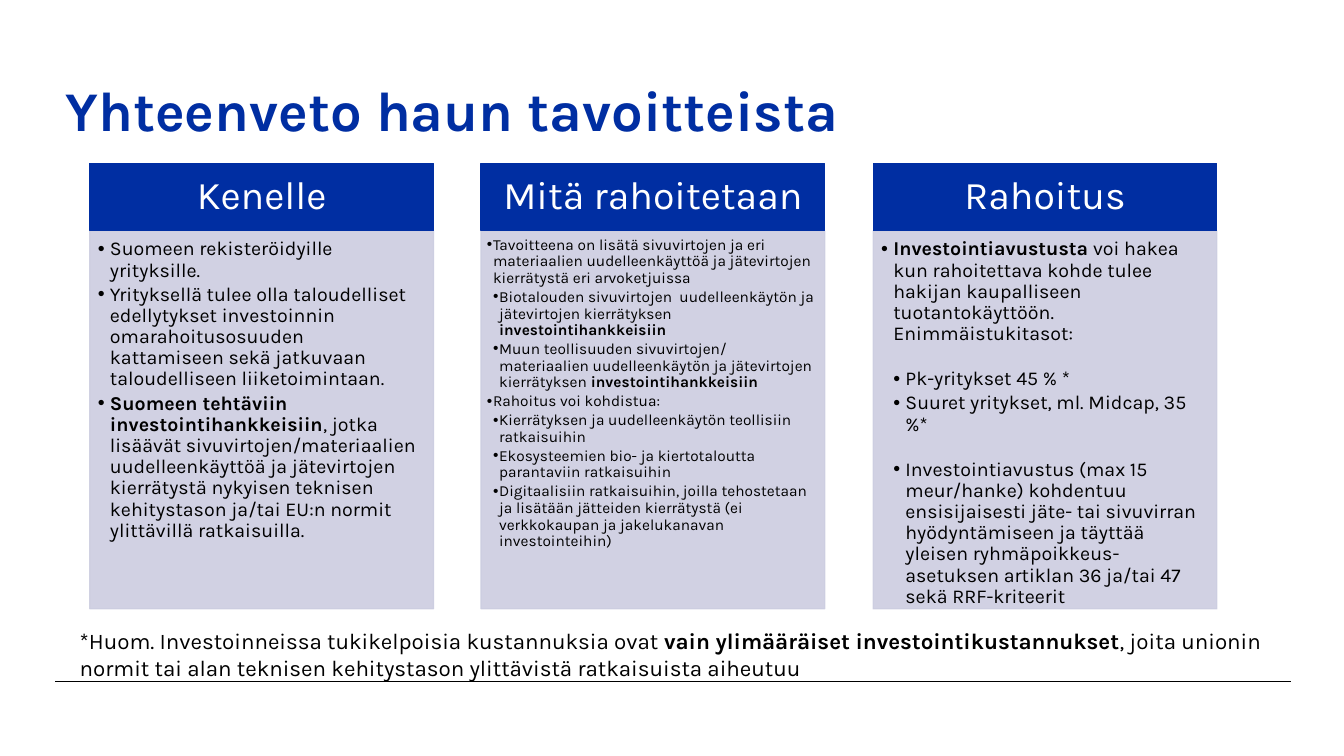
from lxml import etree
from pptx import Presentation
from pptx import util as u
from pptx.dml.color import RGBColor
from pptx.enum import shapes, text
from pptx.oxml.ns import qn

PX = 9144  # EMU in one px, 100 px to the inch
BLUE = RGBColor(0x00, 0x2E, 0xA2)
LAVENDER = RGBColor(0xCC, 0xCD, 0xE0)
BLACK = RGBColor(0x00, 0x00, 0x00)
WHITE = RGBColor(0xFF, 0xFF, 0xFF)

# Each column: heading, text size, indent step, insets, placeholder,
# and its list items as (level, text, extra space after in points)
COLUMNS = [
    ("Kenelle", 14, 12, (8, 8, 11, 12), 2, [
        (0, "Suomeen rekisteröidyille yrityksille.", 0),
        (0, "Yrityksellä tulee olla taloudelliset edellytykset investoinnin "
            "omarahoitusosuuden kattamiseen sekä jatkuvaan taloudelliseen "
            "liiketoimintaan.", 0),
        (0, "**Suomeen tehtäviin investointihankkeisiin**, jotka lisäävät "
            "sivuvirtojen/materiaalien uudelleenkäyttöä ja jätevirtojen "
            "kierrätystä nykyisen teknisen kehitystason ja/tai EU:n normit "
            "ylittävillä ratkaisuilla.", 0),
    ]),
    ("Mitä rahoitetaan", 11, 6, (6, 6, 9, 10), 3, [
        (0, "Tavoitteena on lisätä sivuvirtojen ja eri materiaalien "
            "uudelleenkäyttöä ja jätevirtojen kierrätystä eri arvoketjuissa", 0),
        (1, "Biotalouden sivuvirtojen  uudelleenkäytön ja jätevirtojen "
            "kierrätyksen **investointihankkeisiin**", 0),
        (1, "Muun teollisuuden sivuvirtojen/ materiaalien uudelleenkäytön ja "
            "jätevirtojen kierrätyksen **investointihankkeisiin**", 0),
        (0, "Rahoitus voi kohdistua:", 0),
        (1, "Kierrätyksen ja uudelleenkäytön teollisiin ratkaisuihin", 0),
        (1, "Ekosysteemien bio- ja kiertotaloutta parantaviin ratkaisuihin", 0),
        (1, "Digitaalisiin ratkaisuihin, joilla tehostetaan ja lisätään "
            "jätteiden kierrätystä (ei verkkokaupan ja jakelukanavan "
            "investointeihin)", 0),
    ]),
    ("Rahoitus", 14, 12, (8, 8, 11, 12), 4, [
        (0, "**Investointiavustusta** voi hakea kun rahoitettava kohde tulee "
            "hakijan kaupalliseen tuotantokäyttöön. Enimmäistukitasot:", 15),
        (1, "Pk-yritykset 45 % *", 0),
        (1, "Suuret yritykset, ml. Midcap, 35 %*", 15),
        (1, "Investointiavustus (max 15 meur/hanke) kohdentuu ensisijaisesti "
            "jäte- tai sivuvirran hyödyntämiseen ja täyttää yleisen "
            "ryhmäpoikkeus-asetuksen artiklan 36 ja/tai 47 sekä RRF-kriteerit", 0),
    ]),
]
FOOTNOTE = ("*Huom. Investoinneissa tukikelpoisia kustannuksia ovat "
            "**vain ylimääräiset investointikustannukset**, joita unionin "
            "normit tai alan teknisen kehitystason ylittävistä ratkaisuista "
            "aiheutuu")


def apply(target, values):
    for name, value in values.items():
        setattr(target, name, value)


class Page:
    font = "Karla"
    line_width = u.Pt(0.85)

    def __init__(self, deck, layout):
        self.slide = deck.slides.add_slide(deck.slide_layouts[layout])

    def holder(self, idx, area):
        """Move a template placeholder to an area."""
        box = next(p for p in self.slide.placeholders
                   if p.placeholder_format.idx == idx)
        apply(box, dict(zip(("left", "top", "width", "height"),
                            (n * PX for n in area))))
        return box

    def frame(self, box, insets, anchor):
        sides = ("margin_left", "margin_top", "margin_right", "margin_bottom")
        apply(box.text_frame, dict(zip(sides, (n * PX for n in insets))))
        apply(box.text_frame, {"word_wrap": True, "vertical_anchor": anchor,
                               "auto_size": text.MSO_AUTO_SIZE.NONE})

    def add_words(self, para, words, size, color, bold=False, **layout):
        """Fill a paragraph; ** switches bold on and off."""
        apply(para, {"alignment": text.PP_ALIGN.LEFT, "line_spacing": 0.9,
                     "space_before": u.Pt(0), "space_after": u.Pt(0), **layout})
        for i, part in enumerate(words.split("**")):
            if part:
                span = para.add_run()
                span.text = part
                apply(span.font, {"name": self.font, "size": u.Pt(size),
                                  "bold": bold or i % 2 == 1})
                span.font.color.rgb = color

    def paint(self, box, color, opacity=100):
        box.fill.solid()
        box.fill.fore_color.rgb = color
        box.line.color.rgb = color
        box.line.width = self.line_width
        if opacity < 100:
            for tone in box._element.spPr.iter(qn("a:srgbClr")):
                etree.SubElement(tone, qn("a:alpha")).set("val", str(opacity * 1000))

    def title(self, area, words):
        box = self.holder(0, area)
        self.frame(box, (10, 5, 10, 5), text.MSO_ANCHOR.MIDDLE)
        self.add_words(box.text_frame.paragraphs[0], words, 40, BLUE, bold=True)

    def heading(self, area, words):
        box = self.slide.shapes.add_shape(
            shapes.MSO_SHAPE.RECTANGLE, *(n * PX for n in area))
        box.shadow.inherit = False
        self.paint(box, BLUE)
        self.frame(box, (22, 12, 22, 12), text.MSO_ANCHOR.MIDDLE)
        self.add_words(box.text_frame.paragraphs[0], words, 28, WHITE,
                       alignment=text.PP_ALIGN.CENTER)

    def bullets(self, idx, area, items, size, step, insets):
        box = self.holder(idx, area)
        self.paint(box, LAVENDER, opacity=90)
        self.frame(box, insets, text.MSO_ANCHOR.TOP)
        for i, (level, words, gap) in enumerate(items):
            frame = box.text_frame
            para = frame.add_paragraph() if i else frame.paragraphs[0]
            props = para._p.get_or_add_pPr()
            props.set("marL", str((level + 1) * step * PX))
            props.set("indent", str(-step * PX))
            etree.SubElement(props, qn("a:buChar")).set("char", "•")
            self.add_words(para, words, size, BLACK, level=level,
                           space_after=u.Pt(0.15 * size + gap))

    def note(self, idx, area, words):
        box = self.holder(idx, area)
        self.frame(box, (10, 5, 10, 5), text.MSO_ANCHOR.TOP)
        self.add_words(box.text_frame.paragraphs[0], words, 16, BLACK,
                       line_spacing=1.0)

    def rule(self, left, right, y):
        line = self.slide.shapes.add_connector(
            shapes.MSO_CONNECTOR.STRAIGHT, left * PX, y * PX, right * PX, y * PX)
        line.line.color.rgb = BLACK
        line.line.width = self.line_width
        etree.SubElement(line._element.spPr, qn("a:effectLst"))


def main():
    deck = Presentation()
    deck.slide_width, deck.slide_height = 1333 * PX, 750 * PX
    page = Page(deck, 4)

    # Title and bottom rule
    page.rule(55, 1280, 676)
    page.title((55, 40, 1225, 145), "Yhteenveto haun tavoitteista")

    # Three columns, 388.5 px apart
    for i, (name, size, step, insets, idx, items) in enumerate(COLUMNS):
        left = 89 + 777 * i // 2
        page.heading((left, 162, 341, 67), name)
        page.bullets(idx, (left, 229, 341, 375), items, size, step, insets)

    # Footnote
    page.note(1, (69, 617, 1198, 79), FOOTNOTE)
    deck.save("out.pptx")


if __name__ == "__main__":
    main()
